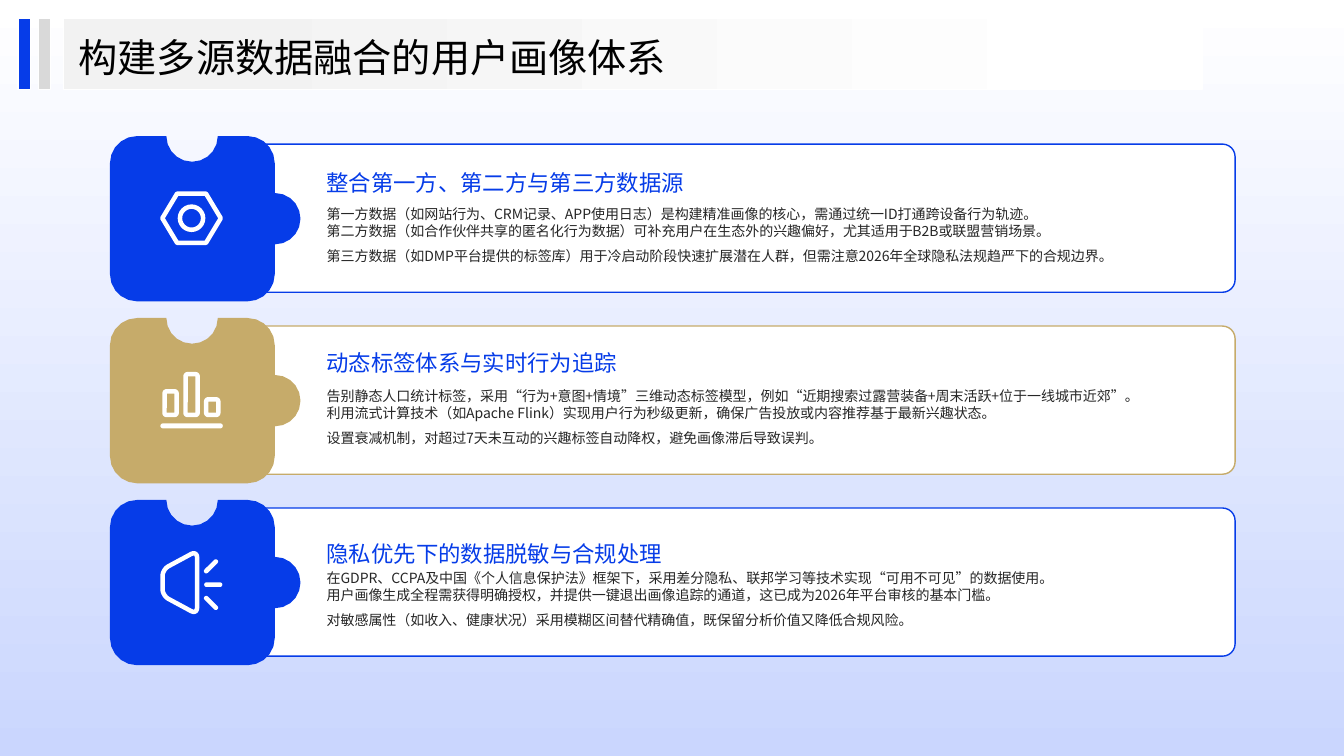
from dataclasses import dataclass
from math import hypot

from lxml import etree
from pptx import Presentation
from pptx.dml.color import RGBColor
from pptx.enum.shapes import MSO_SHAPE
from pptx.enum.text import MSO_ANCHOR, MSO_AUTO_SIZE, PP_ALIGN
from pptx.oxml.ns import qn
from pptx.util import Inches, Pt

RECTANGLE, ROUNDED = MSO_SHAPE.RECTANGLE, MSO_SHAPE.ROUNDED_RECTANGLE
HEXAGON, OVAL = MSO_SHAPE.HEXAGON, MSO_SHAPE.OVAL
LEFT, TOP, MIDDLE = PP_ALIGN.LEFT, MSO_ANCHOR.TOP, MSO_ANCHOR.MIDDLE
NO_FIT = MSO_AUTO_SIZE.NONE
FONT = "Noto Sans CJK SC"
COLORS = {"blue": "063CE8", "gold": "C6AB6A", "white": "FFFFFF", "sky": "CAD6FE",
          "mist": "F2F2F2", "grey": "D9D9D9", "ink": "262626", "black": "000000"}

# The grid: square cells, 133.3 columns by 75 rows
CELL = Inches(0.1)
COLUMNS, ROWS = 133.3, 75
PIECE_LEFT, PIECE_TOP, PIECE_PITCH = 10.9, 13.5, 18.05
TEXT_LEFT, TEXT_WIDTH = 32.4, 87.3
CURVE, STEPS = 0.55, 5
ICON_STROKE = 3.2


@dataclass(frozen=True)
class Corner:
    x: float
    y: float
    radius: float = 0


@dataclass(frozen=True)
class Area:
    left: float
    top: float
    width: float
    height: float

    def emu(self) -> list[int]:
        return [round(n * CELL) for n in (self.left, self.top, self.width, self.height)]


@dataclass(frozen=True)
class Mark:
    kind: int
    area: Area
    adjustment: float | None = None
    rotation: float = 0
    solid: bool = False


Contour = list[Corner]


@dataclass(frozen=True)
class Section:
    color: str
    heading: str
    heading_drop: float
    lines: list[str]
    icon: list[Mark | Contour]


# Puzzle piece and icons, in cells from the top left of a piece
def bar(left: float, top: float) -> Mark:
    return Mark(ROUNDED, Area(left, top, 1.2, 9.62 - top), 0.17)


def ray(left: float, middle: float, rotation: float) -> Mark:
    return Mark(ROUNDED, Area(left, middle - 0.23, 1.8, 0.46), 0.5, rotation, True)


PIECE = [Corner(0, 0, 2.7), Corner(5.6, 0), Corner(5.6, 2.55, 2.54), Corner(10.7, 2.55, 2.54),
         Corner(10.7, 0), Corner(16.35, 0, 2.7), Corner(16.35, 5.65), Corner(18.9, 5.65, 2.54),
         Corner(18.9, 10.75, 2.54), Corner(16.35, 10.75), Corner(16.35, 16.4, 2.7),
         Corner(0, 16.4, 2.7)]
CONE = [Corner(5.22, 6.9, 0.65), Corner(8.65, 5.05, 0.65),
        Corner(8.65, 11.35, 0.65), Corner(5.22, 9.5, 0.65)]
NUT = [Mark(HEXAGON, Area(5.2, 5.7, 5.8, 4.9), 0.3), Mark(OVAL, Area(6.95, 7, 2.3, 2.3))]
BARS = [bar(5.42, 7.27), bar(7.5, 5.57), bar(9.55, 8.07),
        Mark(ROUNDED, Area(5, 10.45, 6.2, 0.5), 0.5, solid=True)]
SPEAKER = [CONE, ray(9.13, 6.58, -45), ray(9.35, 8.4, 0), ray(9.13, 10.22, 45)]

SECTIONS = [
    Section("blue", "整合第一方、第二方与第三方数据源", 1.9, [
        "第一方数据（如网站行为、CRM记录、APP使用日志）是构建精准画像的核心，需通过统一ID打通跨设备行为轨迹。",
        "第二方数据（如合作伙伴共享的匿名化行为数据）可补充用户在生态外的兴趣偏好，尤其适用于B2B或联盟营销场景。",
        "第三方数据（如DMP平台提供的标签库）用于冷启动阶段快速扩展潜在人群，但需注意2026年全球隐私法规趋严下的合规边界。",
    ], NUT),
    Section("gold", "动态标签体系与实时行为追踪", 1.8, [
        "告别静态人口统计标签，采用“行为+意图+情境”三维动态标签模型，例如“近期搜索过露营装备+周末活跃+位于一线城市近郊”。",
        "利用流式计算技术（如Apache Flink）实现用户行为秒级更新，确保广告投放或内容推荐基于最新兴趣状态。",
        "设置衰减机制，对超过7天未互动的兴趣标签自动降权，避免画像滞后导致误判。",
    ], BARS),
    Section("blue", "隐私优先下的数据脱敏与合规处理", 2.7, [
        "在GDPR、CCPA及中国《个人信息保护法》框架下，采用差分隐私、联邦学习等技术实现“可用不可见”的数据使用。",
        "用户画像生成全程需获得明确授权，并提供一键退出画像追踪的通道，这已成为2026年平台审核的基本门槛。",
        "对敏感属性（如收入、健康状况）采用模糊区间替代精确值，既保留分析价值又降低合规风险。",
    ], SPEAKER),
]


def rgb(name: str) -> RGBColor:
    return RGBColor.from_string(COLORS[name])


def paint(shape, fill: str | None, line: str | None = None, width: float = 1) -> None:
    shape.shadow.inherit = False
    if fill:
        shape.fill.solid()
        shape.fill.fore_color.rgb = rgb(fill)
    else:
        shape.fill.background()
    if line:
        shape.line.color.rgb = rgb(line)
        shape.line.width = Pt(width)
    else:
        shape.line.fill.background()


def blend(shape, stops: list[tuple[float, str]], angle: float) -> None:
    shape.fill.gradient()
    shape.fill.gradient_angle = angle
    for stop, (position, name) in zip(shape.fill.gradient_stops, stops):
        stop.position = position
        stop.color.rgb = rgb(name)


def add_panel(page, area: Area, fill: str, line: str | None = None, kind=RECTANGLE):
    panel = page.shapes.add_shape(kind, *area.emu())
    paint(panel, fill, line)
    return panel


def outline(contour: Contour, top: float) -> list[tuple[int, int]]:
    points: list[tuple[float, float]] = []
    for index, corner in enumerate(contour):
        if not corner.radius:
            points.append((corner.x, corner.y))
            continue
        ends = []
        for near in (contour[index - 1], contour[(index + 1) % len(contour)]):
            share = corner.radius / hypot(near.x - corner.x, near.y - corner.y)
            ends.append(((near.x - corner.x) * share, (near.y - corner.y) * share))
        (ax, ay), (bx, by) = ends
        for step in range(STEPS + 1):
            t = step / STEPS
            u = 1 - t
            a = u ** 3 + 3 * u * u * t * (1 - CURVE)
            b = t ** 3 + 3 * t * t * u * (1 - CURVE)
            points.append((corner.x + a * ax + b * bx, corner.y + a * ay + b * by))
    return [(round((PIECE_LEFT + x) * CELL), round((top + y) * CELL)) for x, y in points]


def add_outline(page, contour: Contour, top: float):
    points = outline(contour, top)
    builder = page.shapes.build_freeform(*points[0])
    builder.add_line_segments(points[1:], close=True)
    return builder.convert_to_shape()


def add_icon_part(page, part: Mark | Contour, top: float) -> None:
    if not isinstance(part, Mark):
        paint(add_outline(page, part, top), None, "white", ICON_STROKE)
        return
    area = Area(PIECE_LEFT + part.area.left, top + part.area.top,
                part.area.width, part.area.height)
    shape = page.shapes.add_shape(part.kind, *area.emu())
    if part.adjustment is not None:
        shape.adjustments[0] = part.adjustment
    shape.rotation = part.rotation
    if part.solid:
        paint(shape, "white")
    else:
        paint(shape, None, "white", ICON_STROKE)


def write(frame, lines: list[str], size: float, color: str, spacing: float, anchor=TOP) -> None:
    frame.word_wrap, frame.auto_size, frame.vertical_anchor = True, NO_FIT, anchor
    frame.margin_left = frame.margin_top = frame.margin_right = frame.margin_bottom = 0
    frame.text = "\n".join(lines)
    for para in frame.paragraphs:
        para.alignment, para.line_spacing = LEFT, 1.0
        for span in para.runs:
            span.font.size, span.font.name = Pt(size), FONT
            span.font.color.rgb = rgb(color)
            etree.SubElement(span.font._element, qn("a:ea"), typeface=FONT)
    frame.paragraphs[-1].line_spacing = spacing


def add_text(page, area: Area, lines: list[str], size: float, color: str) -> None:
    write(page.shapes.add_textbox(*area.emu()).text_frame, lines, size, color, 1.5)


def add_section(page, section: Section, top: float) -> None:
    card = add_panel(page, Area(24.6, top + 0.8, 97.9, 14.7), "white", section.color, ROUNDED)
    card.adjustments[0] = 0.085
    paint(add_outline(page, PIECE, top), section.color)
    for part in section.icon:
        add_icon_part(page, part, top)
    add_text(page, Area(TEXT_LEFT, top + 6.9, TEXT_WIDTH, 7.3), section.lines, 10, "ink")
    add_text(page, Area(TEXT_LEFT, top + section.heading_drop, TEXT_WIDTH, 4.2),
             [section.heading], 16, "blue")


def main() -> None:
    deck = Presentation()
    deck.slide_width, deck.slide_height = round(COLUMNS * CELL), ROWS * CELL
    page = deck.slides.add_slide(deck.slide_layouts[5])
    # Backdrop and the three sections
    backdrop = add_panel(page, Area(0, 0, COLUMNS, ROWS), "white")
    blend(backdrop, [(0, "white"), (1, "sky")], 270)
    for index, section in enumerate(SECTIONS):
        add_section(page, section, PIECE_TOP + index * PIECE_PITCH)
    # Title band, with the title in front of it
    band = add_panel(page, Area(6.3, 1.8, 112.9, 7.1), "mist", "white")
    blend(band, [(0.1, "mist"), (0.93, "white")], 0)
    title = page.shapes.title
    title.left, title.top, title.width, title.height = Area(7.8, 2.9, 83, 5.1).emu()
    write(title.text_frame, ["构建多源数据融合的用户画像体系"], 28, "black", 1.1, MIDDLE)
    band._element.addnext(title._element)
    for left, color in ((1.8, "blue"), (3.8, "grey")):
        add_panel(page, Area(left, 1.8, 1.2, 7.1), color, "white")
    deck.save("out.pptx")


if __name__ == "__main__":
    main()
